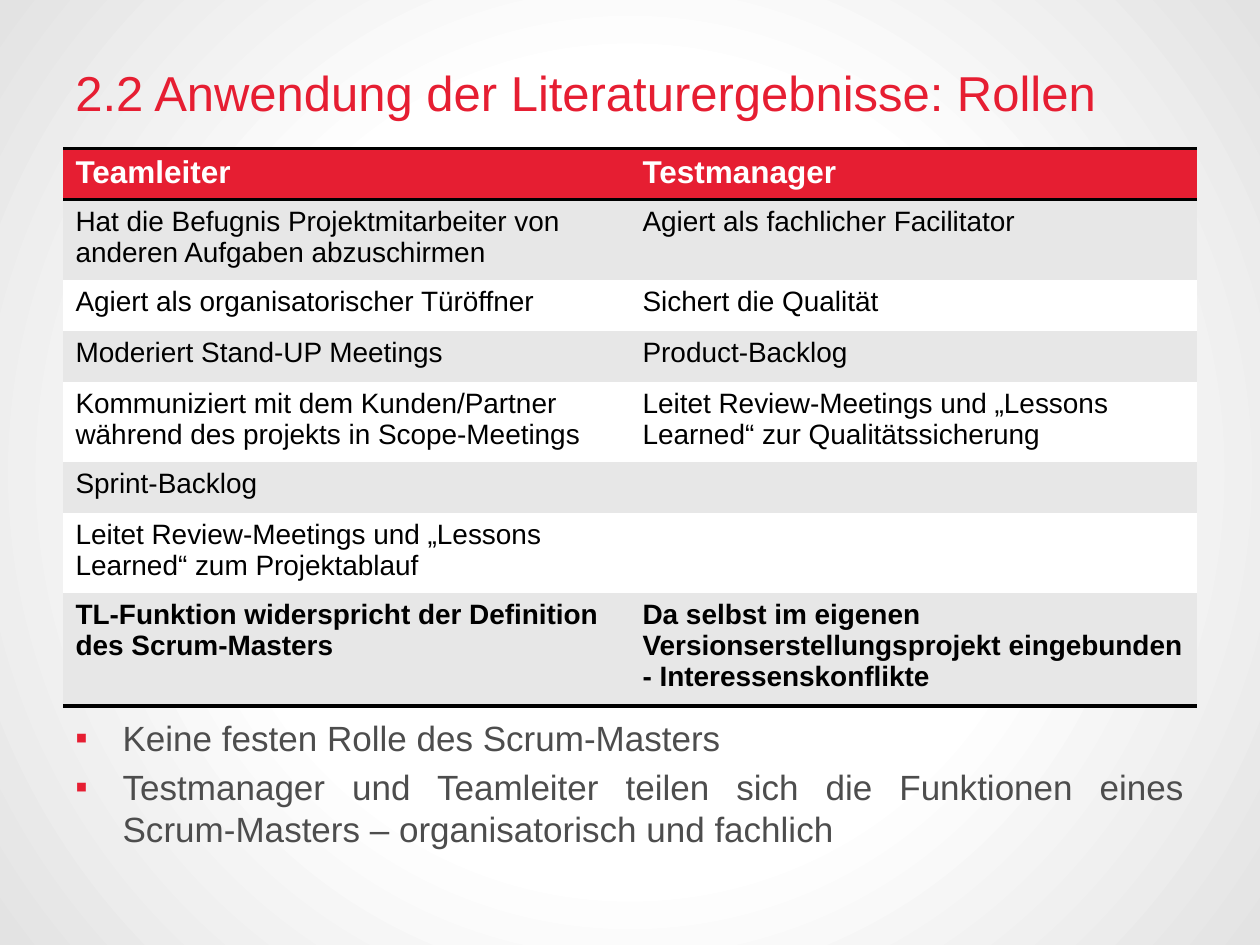
from lxml.etree import SubElement
from pptx import Presentation
from pptx.dml.color import RGBColor
from pptx.enum.text import MSO_ANCHOR, PP_ALIGN
from pptx.oxml import parse_xml
from pptx.oxml.ns import nsdecls, qn
from pptx.util import Pt

FONT = "Arial"
RED, GREY, BLACK, WHITE, BAND = "E61E32", "4D4D4D", "000000", "FFFFFF", "E7E7E7"
NO_STYLE = "{2D5ABB26-0587-4C30-8999-92F81FD0307C}"
LEFT, WIDTH = 36, 648
ROW_HEIGHT = 29.2

ROLES = [
    ("Teamleiter", "Testmanager"),
    ("Hat die Befugnis Projektmitarbeiter von anderen Aufgaben abzuschirmen",
     "Agiert als fachlicher Facilitator"),
    ("Agiert als organisatorischer Türöffner", "Sichert die Qualität"),
    ("Moderiert Stand-UP Meetings", "Product-Backlog"),
    ("Kommuniziert mit dem Kunden/Partner während des projekts in Scope-Meetings",
     "Leitet Review-Meetings und „Lessons Learned“ zur Qualitätssicherung"),
    ("Sprint-Backlog", ""),
    ("Leitet Review-Meetings und „Lessons Learned“ zum Projektablauf", ""),
    ("TL-Funktion widerspricht der Definition des Scrum-Masters",
     "Da selbst im eigenen Versionserstellungsprojekt eingebunden - Interessenskonflikte"),
]
CONCLUSIONS = [
    "Keine festen Rolle des Scrum-Masters",
    "Testmanager und Teamleiter teilen sich die Funktionen eines "
    "Scrum-Masters – organisatorisch und fachlich",
]


def color(value):
    return RGBColor.from_string(value)


def style(paragraph, size, value, bold=False):
    font = paragraph.font
    font.name, font.size, font.bold = FONT, Pt(size), bold
    font.color.rgb = color(value)


def set_background(page):
    stops = "".join(
        f'<a:gs pos="{position * 1000}"><a:srgbClr val="{value}"/></a:gs>'
        for position, value in [(0, WHITE), (51, WHITE), (100, "E3E3E3")])
    background = parse_xml(
        f'<p:bg {nsdecls("p", "a")}><p:bgPr><a:gradFill rotWithShape="1">'
        f'<a:gsLst>{stops}</a:gsLst><a:path path="circle">'
        '<a:fillToRect l="50000" t="50000" r="50000" b="50000"/></a:path>'
        '</a:gradFill><a:effectLst/></p:bgPr></p:bg>')
    page.element.cSld.insert(0, background)


def add_box(page, top, height, anchor):
    box = page.shapes.add_textbox(Pt(LEFT), Pt(top), Pt(WIDTH), Pt(height))
    frame = box.text_frame
    frame.word_wrap = True
    frame.vertical_anchor = anchor
    return frame


def add_title(page, text):
    paragraph = add_box(page, 21.6, 62, MSO_ANCHOR.MIDDLE).paragraphs[0]
    paragraph.text = text
    style(paragraph, 28, RED)


def add_bullet(paragraph):
    properties = paragraph._p.get_or_add_pPr()
    indent = Pt(27)
    properties.set("marL", str(indent))
    properties.set("indent", str(-indent))
    bullet_color = SubElement(properties, qn("a:buClr"))
    SubElement(bullet_color, qn("a:srgbClr"), val=RED)
    SubElement(properties, qn("a:buFont"), typeface=FONT)
    SubElement(properties, qn("a:buChar"), char="▪")


def add_bullets(page, lines):
    frame = add_box(page, 406, 102, MSO_ANCHOR.TOP)
    for index, line in enumerate(lines):
        paragraph = frame.add_paragraph() if index else frame.paragraphs[0]
        paragraph.text = line
        paragraph.alignment = PP_ALIGN.JUSTIFY
        if index:
            paragraph.space_before = Pt(4)
        add_bullet(paragraph)
        style(paragraph, 20, GREY)


def add_borders(cell, sides):
    properties = cell._tc.get_or_add_tcPr()
    for side in sides:
        line = SubElement(properties, qn(f"a:ln{side}"), w=str(Pt(2)))
        fill = SubElement(line, qn("a:solidFill"))
        SubElement(fill, qn("a:srgbClr"), val=BLACK)


def fill_cell(cell, text, row, last):
    header = row == 0
    add_borders(cell, "TB" if header else "B" if row == last else "")
    cell.fill.solid()
    cell.fill.fore_color.rgb = color(RED if header else BAND if row % 2 else WHITE)
    paragraph = cell.text_frame.paragraphs[0]
    if text:
        paragraph.text = text
    style(paragraph, 18 if header else 16, WHITE if header else BLACK,
          bold=row in (0, last))


def add_roles(page, rows):
    frame = page.shapes.add_table(len(rows), 2, Pt(LEFT), Pt(85), Pt(WIDTH),
                                  Pt(ROW_HEIGHT * len(rows)))
    table = frame.table
    table.horz_banding = False
    table._tbl.tblPr.find(qn("a:tableStyleId")).text = NO_STYLE
    for row, texts in enumerate(rows):
        table.rows[row].height = Pt(ROW_HEIGHT)
        for column, text in enumerate(texts):
            fill_cell(table.cell(row, column), text, row, len(rows) - 1)


def main():
    deck = Presentation()
    deck.slide_width, deck.slide_height = Pt(720), Pt(540)
    page = deck.slides.add_slide(deck.slide_layouts[6])
    set_background(page)
    add_title(page, "2.2 Anwendung der Literaturergebnisse: Rollen")
    add_bullets(page, CONCLUSIONS)
    add_roles(page, ROLES)
    deck.save("out.pptx")


if __name__ == "__main__":
    main()
